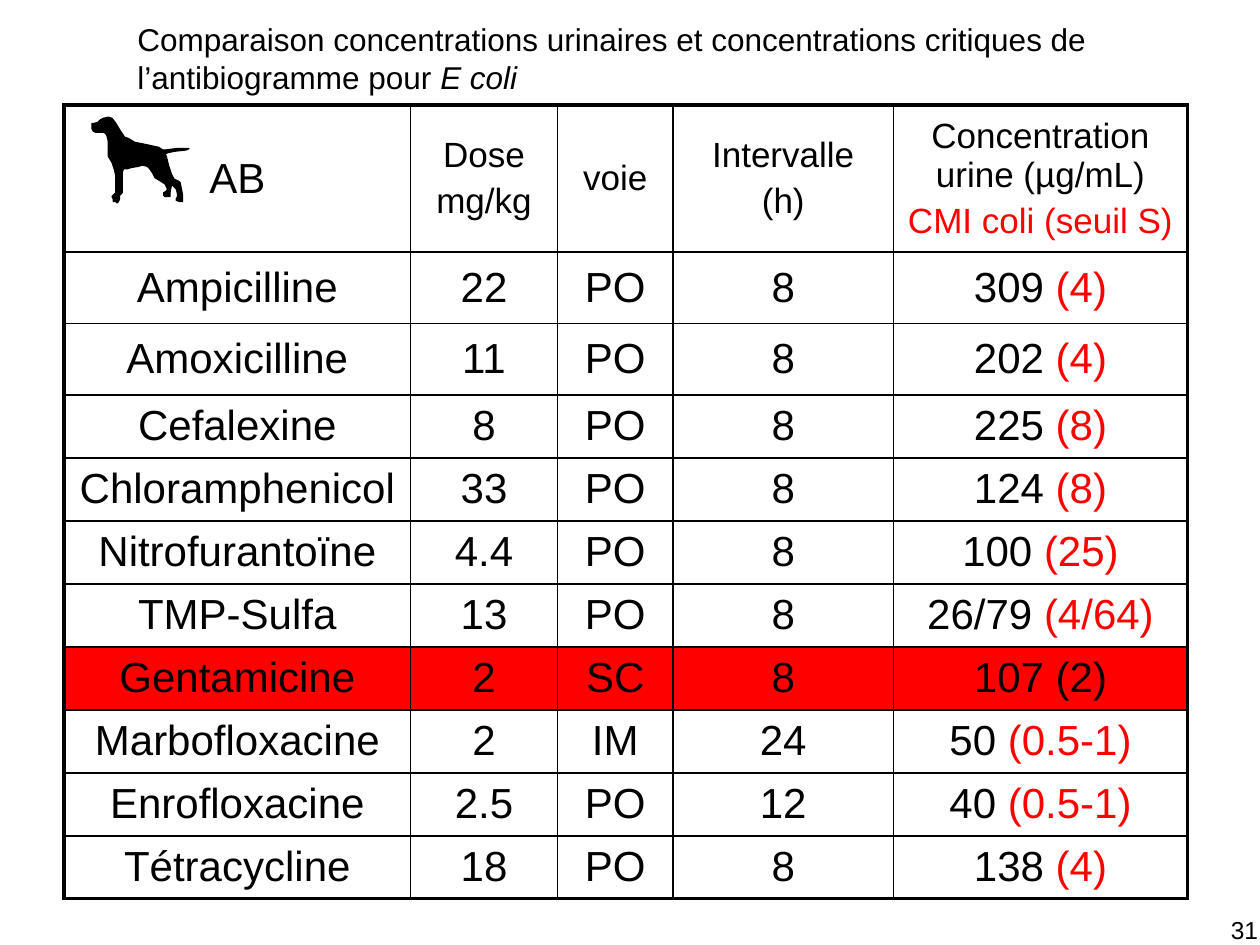
"""Build a slide comparing urine levels of antibiotics with E coli breakpoints."""
from typing import Any, NamedTuple

from lxml import etree
from pptx import Presentation
from pptx.dml.color import RGBColor
from pptx.enum.text import MSO_ANCHOR, PP_ALIGN
from pptx.oxml.ns import qn
from pptx.util import Inches, Pt

BLACK = RGBColor(0, 0, 0)
RED = RGBColor(255, 0, 0)
LEFT, MID, RIGHT = PP_ALIGN.LEFT, PP_ALIGN.CENTER, PP_ALIGN.RIGHT
MIDDLE = MSO_ANCHOR.MIDDLE
UNIT = Inches(1) // 12
THIN, THICK = Pt(1), Pt(2.25)
COLS = [33, 14, 11, 21, 28]
ROWS = [14, 6.8, 6.8] + [6] * 8


class Run(NamedTuple):
    """A piece of text with its colour and font values."""
    text: str
    tint: RGBColor = BLACK
    form: dict[str, Any] = {}


class Drug(NamedTuple):
    """A table row for one antibiotic."""
    name: str
    dose: str
    route: str
    hours: str
    level: str
    limit: str
    hot: bool = False


class Box(NamedTuple):
    """A text box measured in grid units."""
    left: float
    top: float
    width: float
    height: float
    size: int
    align: PP_ALIGN
    runs: list[Run]


HEADS = [
    (24, [[Run("AB")]]),
    (20, [[Run("Dose")], [Run("mg/kg")]]),
    (20, [[Run("voie")]]),
    (20, [[Run("Intervalle")], [Run("(h)")]]),
    (20, [[Run("Concentration urine (µg/mL)")], [Run("CMI coli (seuil S)", RED)]]),
]
DRUGS = [
    Drug("Ampicilline", "22", "PO", "8", "309", "(4)"),
    Drug("Amoxicilline", "11", "PO", "8", "202", "(4)"),
    Drug("Cefalexine", "8", "PO", "8", "225", "(8)"),
    Drug("Chloramphenicol", "33", "PO", "8", "124", "(8)"),
    Drug("Nitrofurantoïne", "4.4", "PO", "8", "100", "(25)"),
    Drug("TMP-Sulfa", "13", "PO", "8", "26/79", "(4/64)"),
    Drug("Gentamicine", "2", "SC", "8", "107", "(2)", True),
    Drug("Marbofloxacine", "2", "IM", "24", "50", "(0.5-1)"),
    Drug("Enrofloxacine", "2.5", "PO", "12", "40", "(0.5-1)"),
    Drug("Tétracycline", "18", "PO", "8", "138", "(4)"),
]
BOXES = [
    Box(11.9, 1.3, 93.2, 8.4, 18, LEFT, [
        Run("Comparaison concentrations urinaires et concentrations critiques "
            "de l’antibiogramme pour "),
        Run("E coli", form={"italic": True})]),
    Box(92.9, 86.6, 28.1, 4.9, 14, RIGHT, [Run("31")]),
]
DOG = [
    (82, 105), (76, 105), (74, 104), (73, 102), (73, 98), (75, 98), (78, 97),
    (80, 95), (82, 94), (86, 93), (89, 94), (92, 98), (95, 103), (99, 109),
    (102, 110), (107, 113), (117, 115), (126, 117), (129, 119), (132, 119),
    (140, 118), (150, 118), (148, 119), (139, 120), (134, 121), (131, 122),
    (132, 124), (134, 132), (136, 138), (138, 142), (142, 144), (143, 145),
    (144, 150), (145, 155), (145, 160), (143, 160), (140, 159), (140, 158),
    (141, 156), (141, 154), (140, 150), (138, 148), (136, 146), (136, 147),
    (135, 153), (135, 156), (133, 156), (131, 156), (130, 155), (130, 153),
    (132, 152), (133, 150), (131, 146), (128, 144), (123, 141), (121, 137),
    (119, 134), (117, 132), (113, 131), (110, 132), (104, 133), (101, 134),
    (98, 134), (97, 137), (97, 139), (97, 149), (97, 153), (95, 155),
    (95, 158), (94, 160), (93, 161), (92, 160), (90, 160), (90, 158),
    (89, 156), (92, 153), (92, 151), (92, 140), (91, 135), (89, 129),
    (86, 124), (86, 120), (86, 112), (85, 108), (84, 106),
]


def grid(count: float) -> int:
    """Turn grid units into a length."""
    return round(count * UNIT)


def write(frame: Any, lines: list[list[Run]], size: int, align: PP_ALIGN) -> None:
    """Fill a text frame with lines of runs."""
    frame.word_wrap = True
    for row, line in enumerate(lines):
        para = frame.add_paragraph() if row else frame.paragraphs[0]
        para.alignment = align
        para.space_before = Pt(size * 0.2 if row else 0)
        for item in line:
            run = para.add_run()
            run.text = item.text
            run.font.color.rgb = item.tint
            form = {"name": "Arial", "size": Pt(size), **item.form}
            for key, value in form.items():
                setattr(run.font, key, value)


def edge(cell: Any, sides: dict[str, int]) -> None:
    """Draw the borders of a cell."""
    props = cell._tc.get_or_add_tcPr()
    for side, width in sides.items():
        line = etree.SubElement(props, qn(f"a:ln{side}"), w=str(width))
        fill = etree.SubElement(line, qn("a:solidFill"))
        etree.SubElement(fill, qn("a:srgbClr"), val=str(BLACK))


def cells(drug: Drug) -> list[tuple[int, list[list[Run]]]]:
    """Give the text size and lines of each cell in a row."""
    tint = BLACK if drug.hot else RED
    plain = [[Run(text)] for text in drug[:4]]
    last = [Run(f"{drug.level} "), Run(drug.limit, tint)]
    return [(24, [line]) for line in [*plain, last]]


def chart(slide: Any) -> None:
    """Add the table of drugs."""
    frame = slide.shapes.add_table(
        len(ROWS), len(COLS), grid(6.1), grid(10), grid(sum(COLS)), grid(sum(ROWS)))
    table = frame.table
    table.first_row = table.horz_banding = False
    for col, width in zip(table.columns, COLS):
        col.width = grid(width)
    for row, height in zip(table.rows, ROWS):
        row.height = grid(height)
    for row, texts in enumerate([HEADS, *map(cells, DRUGS)]):
        for col, (size, lines) in enumerate(texts):
            cell = table.cell(row, col)
            cell.vertical_anchor = MIDDLE
            write(cell.text_frame, lines, size, MID)
            edge(cell, {
                "L": THIN if col else THICK,
                "R": THICK if col == len(COLS) - 1 else THIN,
                "T": THIN if row else THICK,
                "B": THICK if row == len(ROWS) - 1 else THIN})
            if row and DRUGS[row - 1].hot:
                cell.fill.solid()
                cell.fill.fore_color.rgb = RED
            else:
                cell.fill.background()


def hound(slide: Any) -> None:
    """Add the dog outline, in hundredths of an inch."""
    pen = slide.shapes.build_freeform(*DOG[0], scale=Inches(0.01))
    pen.add_line_segments(DOG[1:], close=True)
    shape = pen.convert_to_shape()
    shape.shadow.inherit = False
    shape.fill.solid()
    shape.fill.fore_color.rgb = shape.line.color.rgb = BLACK
    shape.line.width = Pt(0.75)


def label(slide: Any, box: Box) -> None:
    """Add a text box."""
    shape = slide.shapes.add_textbox(*map(grid, box[:4]))
    write(shape.text_frame, [box.runs], box.size, box.align)


def main() -> None:
    """Build and save the slide."""
    deck = Presentation()
    deck.slide_width, deck.slide_height = Inches(10), Inches(7.5)
    slide = deck.slides.add_slide(deck.slide_layouts[6])
    chart(slide)
    hound(slide)
    for box in BOXES:
        label(slide, box)
    deck.save("out.pptx")


if __name__ == "__main__":
    main()
